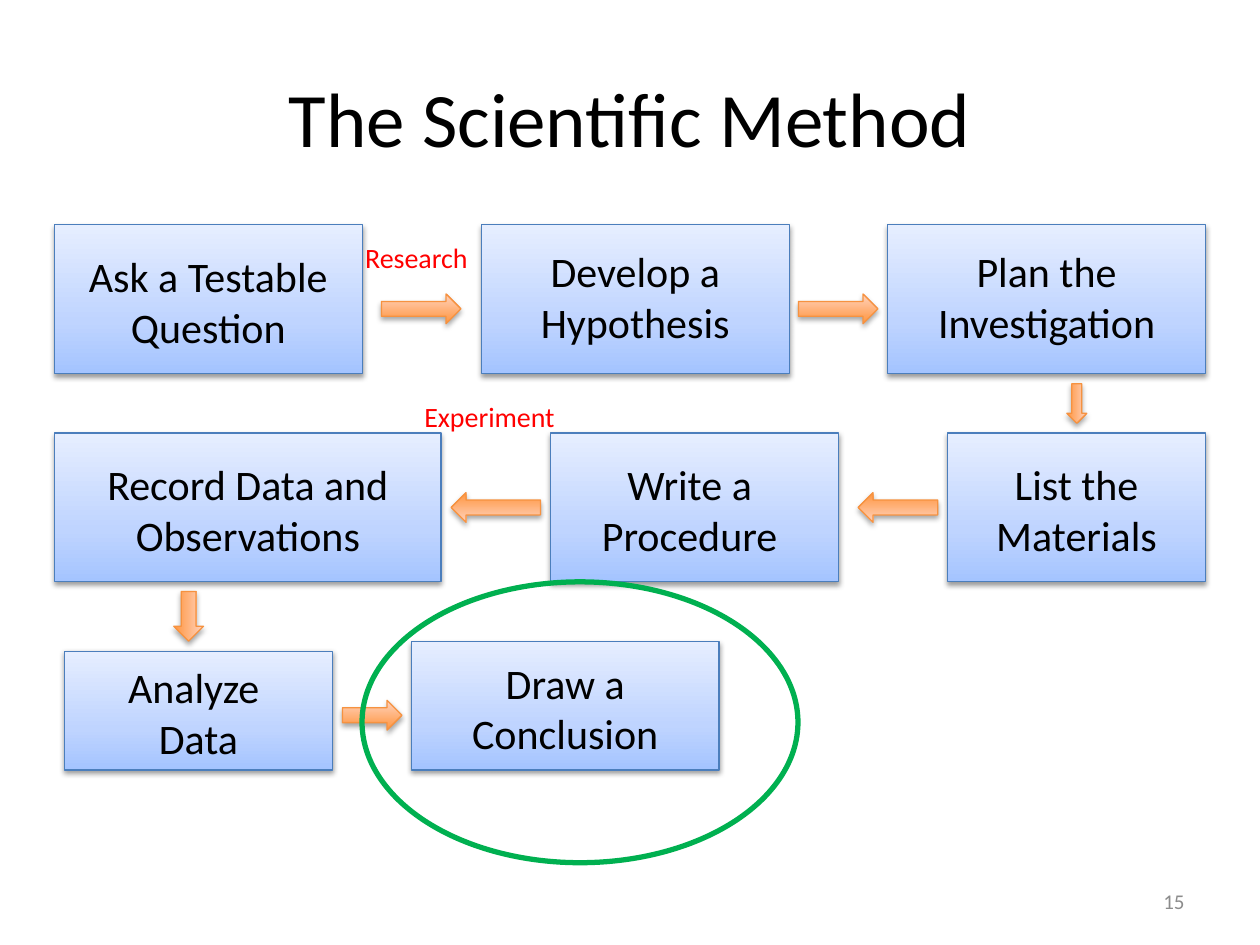
from copy import deepcopy

from pptx import Presentation
from pptx.dml.color import RGBColor
from pptx.enum.shapes import MSO_SHAPE as Shape
from pptx.enum.text import MSO_ANCHOR as Anchor, PP_ALIGN as Align
from pptx.oxml import parse_xml
from pptx.util import Pt

COLORS = {
    "text": "000000", "note": "FF0000", "number": "8C8C8C",
    "step_low": "A4C4FF", "step_mid": "BFD4FF", "step_high": "E6EEFF", "step_line": "4B7EBC",
    "arrow_low": "FF953E", "arrow_high": "FFD2BD", "arrow_line": "F69240",
    "ring": "00B050", "shadow": "000000",
}
STEP_STOPS = [(0, "step_low"), (0.35, "step_mid"), (1, "step_high")]
ARROW_STOPS = [(0, "arrow_low"), (1, "arrow_high")]
DRAWING_NS = "http://schemas.openxmlformats.org/drawingml/2006/main"
LABEL_HEIGHT = 65.5
TOP_ROW, MIDDLE_ROW, ROW_HEIGHT = 128.4, 247.5, 85

# Each step: box (left, top, width, height), label (left and top inside the box, width), lines
STEPS = [
    ((31, TOP_ROW, 176, ROW_HEIGHT), (0, 11.4, 176), ["Ask a Testable Question"]),
    ((275, TOP_ROW, 176, ROW_HEIGHT), (17, 8.5, 142), ["Develop a Hypothesis"]),
    ((507.3, TOP_ROW, 181.7, ROW_HEIGHT), (5.7, 8.5, 170), ["Plan the Investigation"]),
    ((541.3, MIDDLE_ROW, 147.7, ROW_HEIGHT), (11.5, 11.2, 124.7), ["List the Materials"]),
    ((314.7, MIDDLE_ROW, 164.3, ROW_HEIGHT), (17, 11.2, 124.7), ["Write a Procedure"]),
    ((31, MIDDLE_ROW, 221, ROW_HEIGHT), (11.4, 11.2, 198.5), ["Record Data and Observations"]),
    ((36.8, 372.2, 153.2, 67.8), (0, 2.3, 153.2), ["Analyze ", "Data"]),
    ((235.2, 366.5, 175.8, 73.5), (16.8, 5.7, 142), ["Draw a Conclusion"]),
]
ARROWS = [
    ((218, 168, 45.4, 17), 0),
    ((456.3, 168, 45.4, 17), 0),
    ((604, 224.9, 22.6, 11.4), 90),
    ((490.4, 281.5, 45.4, 17), 180),
    ((257.8, 281.5, 51, 17), 180),
    ((93.6, 343.7, 28.4, 17), 90),
    ((195.7, 400.2, 34, 17), 0),
]
NOTES = [((201.6, 133.9, 90.7, 26.6), "Research"), ((235.4, 224.6, 102.2, 26.6), "Experiment")]


def color(name):
    """Return the palette colour of this name."""
    return RGBColor.from_string(COLORS[name])


def add_text(shapes, box, lines, size, color_name, align=Align.LEFT, anchor=Anchor.TOP):
    """Place a wrapped text box with one paragraph per line."""
    frame = shapes.add_textbox(*map(Pt, box)).text_frame
    frame.word_wrap = True
    frame.vertical_anchor = anchor
    frame.text = "\n".join(lines)
    for paragraph in frame.paragraphs:
        paragraph.alignment = align
        paragraph.font.name = "Calibri"
        paragraph.font.size = Pt(size)
        paragraph.font.color.rgb = color(color_name)


def fill_gradient(shape, stops):
    """Fill a shape with stops that run from bottom to top."""
    shape.fill.gradient()
    shape.fill.gradient_angle = 90
    stop_list = shape._element.spPr.find(f".//{{{DRAWING_NS}}}gsLst")
    for _ in stops[2:]:
        stop_list.append(deepcopy(stop_list[0]))
    for element, stop, (position, name) in zip(stop_list, shape.fill.gradient_stops, stops):
        element.set("pos", str(int(position * 100000)))
        stop.color.rgb = color(name)


def add_shadow(shape, alpha, distance):
    """Give a shape a soft shadow straight below it."""
    shape._element.spPr.append(parse_xml(
        f'<a:effectLst xmlns:a="{DRAWING_NS}">'
        f'<a:outerShdw blurRad="{Pt(3.1)}" dist="{Pt(distance)}" dir="5400000" rotWithShape="0">'
        f'<a:srgbClr val="{COLORS["shadow"]}"><a:alpha val="{alpha * 1000}"/></a:srgbClr>'
        '</a:outerShdw></a:effectLst>'))


def add_step(slide, box, label, lines):
    """Place one step of the method as a group of panel and label."""
    left, top = box[:2]
    inset_left, inset_top, width = label
    shapes = slide.shapes.add_group_shape().shapes
    panel = shapes.add_shape(Shape.RECTANGLE, *map(Pt, box))
    fill_gradient(panel, STEP_STOPS)
    panel.line.color.rgb = color("step_line")
    panel.line.width = Pt(0.75)
    add_shadow(panel, 38, 1.6)
    label_box = (left + inset_left, top + inset_top, width, LABEL_HEIGHT)
    add_text(shapes, label_box, lines, 24, "text", Align.CENTER)


def add_arrow(slide, box, rotation):
    """Place a block arrow turned to its direction."""
    arrow = slide.shapes.add_shape(Shape.RIGHT_ARROW, *map(Pt, box))
    arrow.rotation = rotation
    fill_gradient(arrow, ARROW_STOPS)
    arrow.line.color.rgb = color("arrow_line")
    arrow.line.width = Pt(0.75)
    add_shadow(arrow, 35, 1.8)


def add_ring(slide, box):
    """Place the open ellipse that marks the current step."""
    ring = slide.shapes.add_shape(Shape.OVAL, *map(Pt, box))
    ring.shadow.inherit = False
    ring.fill.background()
    ring.line.color.rgb = color("ring")
    ring.line.width = Pt(3)


def main():
    """Build the slide and save it."""
    presentation = Presentation()
    presentation.slide_width, presentation.slide_height = Pt(720), Pt(540)
    slide = presentation.slides.add_slide(presentation.slide_layouts[6])
    add_text(slide.shapes, (36, 21.6, 648, 90), ["The Scientific Method"], 44, "text",
             Align.CENTER, Anchor.MIDDLE)
    add_text(slide.shapes, (516, 500.5, 168, 28.75), ["15"], 12, "number",
             Align.RIGHT, Anchor.MIDDLE)
    for step in STEPS:
        add_step(slide, *step)
    for arrow in ARROWS:
        add_arrow(slide, *arrow)
    for box, note in NOTES:
        add_text(slide.shapes, box, [note], 16, "note")
    add_ring(slide, (206.9, 332.5, 249.1, 160.5))
    presentation.save("out.pptx")


if __name__ == "__main__":
    main()
